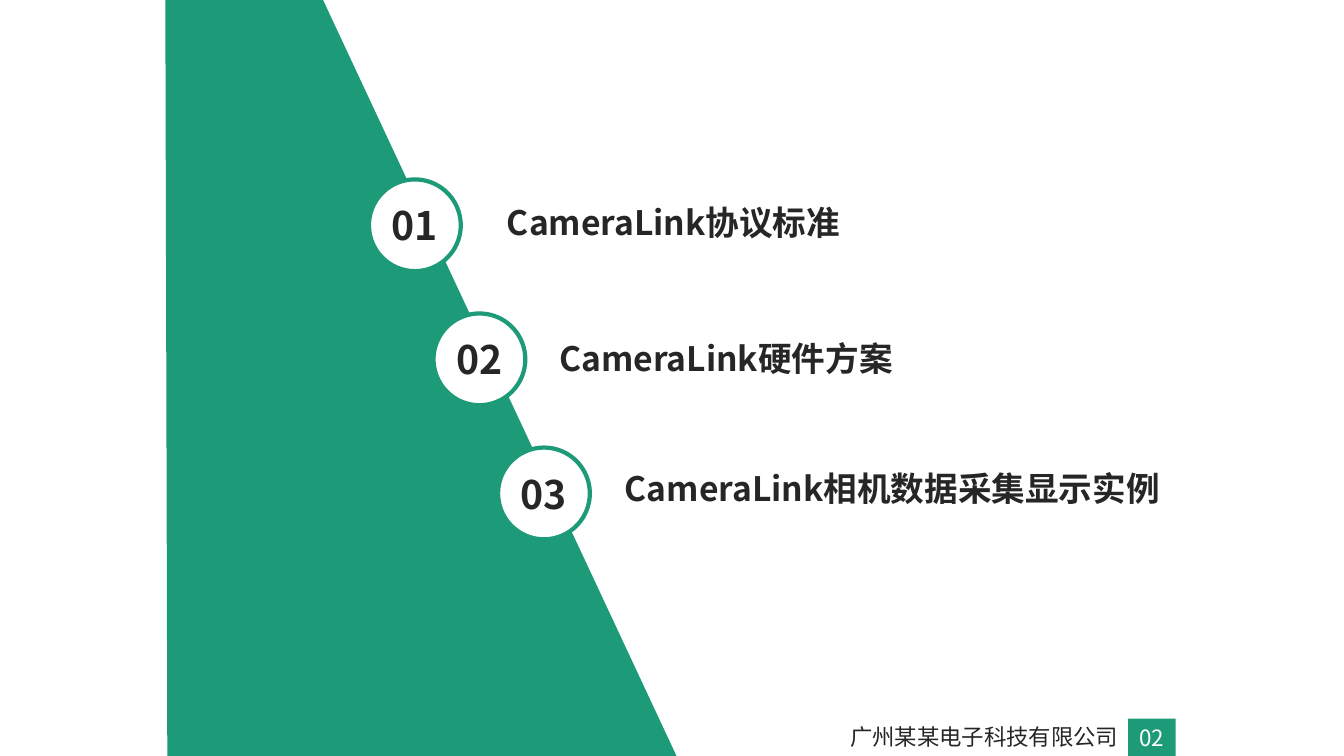
from lxml.etree import SubElement
from pptx import Presentation
from pptx.dml.color import RGBColor
from pptx.enum.shapes import MSO_SHAPE
from pptx.enum.text import MSO_ANCHOR, PP_ALIGN
from pptx.oxml.ns import qn
from pptx.util import Pt

PX = 9144  # 100 px to the inch
FONT = "Noto Sans CJK SC"
HUES = {"green": "1D9A78", "white": "FFFFFF", "ink": "262626"}
# heading, left and top of its text
TOPICS = [
    ("CameraLink协议标准", 493, 195),
    ("CameraLink硬件方案", 545, 330),
    ("CameraLink相机数据采集显示实例", 610, 459),
]


def hue(name):
    return RGBColor.from_string(HUES[name])


def paint(shape, fill, line=None):
    shape.shadow.inherit = False
    shape.fill.solid()
    shape.fill.fore_color.rgb = hue(fill)
    if line:
        shape.line.color.rgb = hue(line)
        shape.line.width = Pt(3)
    else:
        shape.line.fill.background()


def write(shape, text, size, color="ink", bold=False, align=PP_ALIGN.LEFT):
    frame = shape.text_frame
    frame.word_wrap = True
    para = frame.paragraphs[0]
    para.text = text
    para.alignment = align
    font = para.font
    font.size, font.bold = Pt(size), bold
    font.color.rgb = hue(color)
    font.name = FONT
    SubElement(font._element, qn("a:ea"), typeface=FONT)


def add_label(slide, box, text, size, **style):
    shape = slide.shapes.add_textbox(*(n * PX for n in box))
    write(shape, text, size, **style)


def add_badge(slide, kind, box, text, size, fill, color, line=None, bold=False):
    """Place a filled shape with a number in its middle."""
    shape = slide.shapes.add_shape(kind, *(n * PX for n in box))
    paint(shape, fill, line)
    frame = shape.text_frame
    frame.margin_left = frame.margin_right = 0
    frame.margin_top = frame.margin_bottom = 0
    frame.vertical_anchor = MSO_ANCHOR.MIDDLE
    write(shape, text, size, color, bold, PP_ALIGN.CENTER)


def add_panel(slide, box):
    """Draw the green panel with its slanted right edge."""
    left, top, width, height = box
    right, bottom = left + width, top + height
    pen = slide.shapes.build_freeform(right, bottom - 4, scale=PX)
    pen.add_line_segments(
        [(left + 156, top), (left, top), (left + 2, bottom)], close=True
    )
    paint(pen.convert_to_shape(), "green")


def add_topics(slide, box):
    """Step the numbered circles down the slant, each with its heading."""
    left, top, size = box
    for i, (text, x, y) in enumerate(TOPICS):
        spot = (left + 64 * i, top + 133 * i, size, size)
        add_badge(slide, MSO_SHAPE.OVAL, spot, f"{i + 1:02}", 28,
                  "white", "ink", line="green", bold=True)
        add_label(slide, (x, y, 640, 50), text, 24, bold=True)


def add_footer(slide, box):
    left, top, width, height = box
    side = 47
    split = left + width - side
    add_badge(slide, MSO_SHAPE.RECTANGLE, (split, top, side, height),
              "02", 16, "green", "white")
    add_label(slide, (left, top, split - left, height),
              "广州某某电子科技有限公司", 16, align=PP_ALIGN.RIGHT)


def main():
    deck = Presentation()
    deck.slide_width, deck.slide_height = 1333 * PX, 750 * PX
    slide = deck.slides.add_slide(deck.slide_layouts[6])
    add_panel(slide, (164, -1, 507, 755))
    add_topics(slide, (366, 178, 91))
    add_footer(slide, (300, 713, 866, 37))
    deck.save("out.pptx")


if __name__ == "__main__":
    main()
